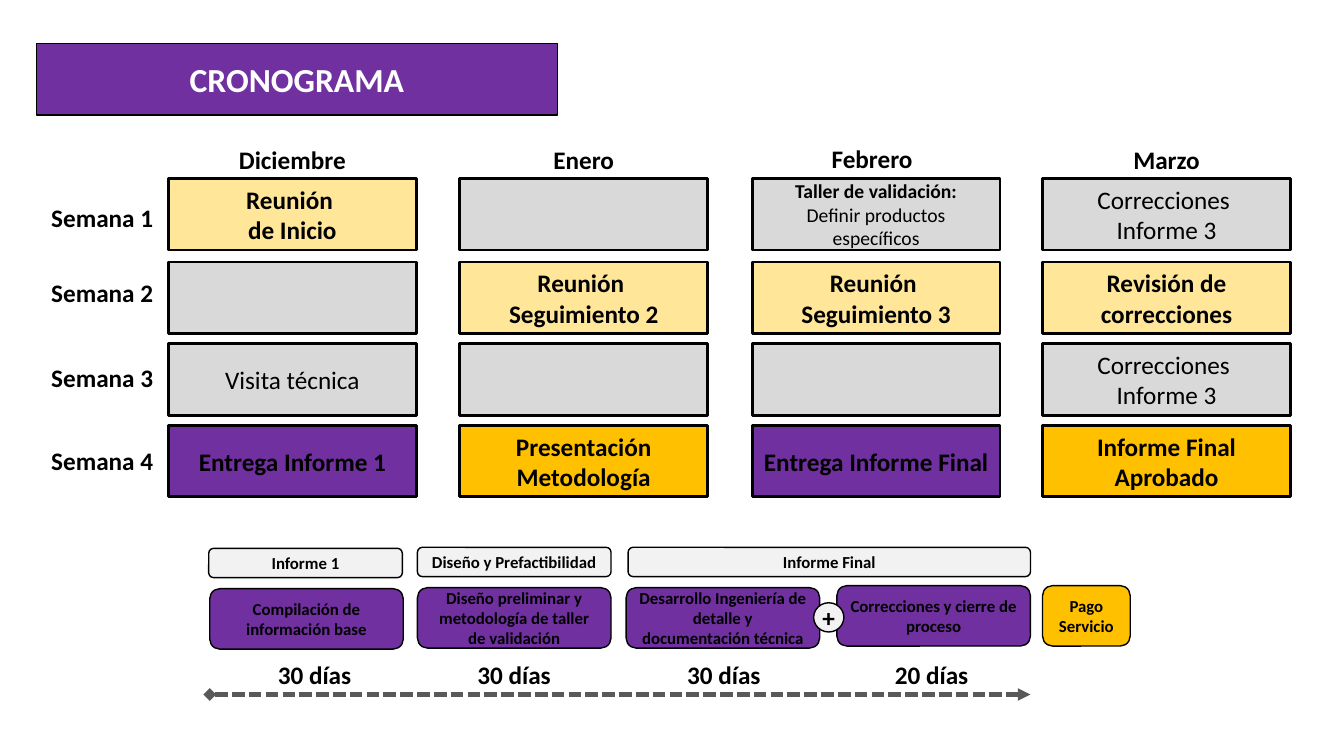
from lxml import etree
from pptx import Presentation
from pptx import util as u
from pptx.dml.color import RGBColor
from pptx.enum import dml, shapes, text
from pptx.oxml import ns

PX = 9144
HUES = {"purple": "7030A0", "gold": "FFC000", "cream": "FFE699", "grey": "D9D9D9",
        "pale": "F2F2F2", "black": "000000", "white": "FFFFFF", "dark": "595959"}
HUE = {name: RGBColor.from_string(code) for name, code in HUES.items()}
KIND = shapes.MSO_SHAPE

deck = Presentation()
deck.slide_width, deck.slide_height = 1333 * PX, 750 * PX
slide = deck.slides.add_slide(deck.slide_layouts[5])


def write(item, words, size, bold=True, hue="black", align="CENTER"):
    frame = item.text_frame
    frame.text = words
    frame.word_wrap = True
    frame.auto_size = text.MSO_AUTO_SIZE.NONE
    frame.vertical_anchor = text.MSO_ANCHOR.MIDDLE
    for para in frame.paragraphs:
        para.alignment = text.PP_ALIGN[align]
        for run in para.runs:
            run.font.name = "Calibri"
            run.font.size = u.Pt(size)
            run.font.bold = bold
            run.font.color.rgb = HUE[hue]


def box(kind, area, fill, line, words, size, bold=True):
    item = slide.shapes.add_shape(kind, *[n * PX for n in area])
    item.shadow.inherit = False
    item.fill.solid()
    item.fill.fore_color.rgb = HUE[fill]
    item.line.color.rgb = HUE["black"]
    item.line.width = u.Pt(line)
    if words:
        write(item, words, size, bold)
    return item


title = slide.shapes.title
title.left, title.top, title.width, title.height = [n * PX for n in (36, 43, 517, 71)]
etree.SubElement(title.element.spPr, ns.qn("a:prstGeom"), prst="roundRect")
title.fill.solid()
title.fill.fore_color.rgb = HUE["purple"]
title.line.color.rgb = HUE["black"]
title.line.width = u.Pt(1)
write(title, "CRONOGRAMA", 24, hue="white")

labels = [
    ("Diciembre", 167, 138, 246, "CENTER"),
    ("Enero", 456, 138, 246, "CENTER"),
    ("Febrero", 742, 137, 246, "CENTER"),
    ("Marzo", 1034, 138, 246, "CENTER"),
    ("Semana 1", 41, 196, 128, "LEFT"),
    ("Semana 2", 41, 270, 128, "LEFT"),
    ("Semana 3", 41, 354, 128, "LEFT"),
    ("Semana 4", 41, 437, 128, "LEFT"),
    ("30 días", 252, 649, 120, "CENTER"),
    ("30 días", 450, 649, 120, "CENTER"),
    ("30 días", 658, 649, 120, "CENTER"),
    ("20 días", 864, 649, 120, "CENTER"),
]
for words, x, y, wide, align in labels:
    label = slide.shapes.add_textbox(x * PX, y * PX, wide * PX, 40 * PX)
    write(label, words, 18, align=align)

cols = (167, 456, 746, 1034)
weeks = [
    (177, [("cream", "Reunión \vde Inicio"), ("grey", ""),
           ("grey", "Taller de validación:\vDefinir productos específicos"),
           ("grey", "Correcciones \vInforme 3")]),
    (260, [("grey", ""), ("cream", "Reunión \vSeguimiento 2"),
           ("cream", "Reunión \vSeguimiento 3"), ("cream", "Revisión de correcciones")]),
    (341, [("grey", "Visita técnica"), ("grey", ""), ("grey", ""),
           ("grey", "Correcciones \vInforme 3")]),
    (422, [("purple", "Entrega Informe 1"), ("gold", "Presentación Metodología"),
           ("purple", "Entrega Informe Final"), ("gold", "Informe Final Aprobado")]),
]
for y, cells in weeks:
    for x, (fill, words) in zip(cols, cells):
        talk = words.startswith("Taller")
        cell = box(KIND.RECTANGLE, (x, y, 246, 71), fill, 2, words,
                   14 if talk else 18, fill != "grey")
        if talk:
            cell.text_frame.paragraphs[0].runs[0].font.bold = True

stages = [
    ("Informe 1", 207, 544, 192, 29, "pale"),
    ("Diseño y Prefactibilidad", 414, 543, 192, 29, "pale"),
    ("Informe Final", 623, 543, 399, 29, "pale"),
    ("Compilación de información base", 208, 584, 192, 60, "purple"),
    ("Diseño preliminar y metodología de taller de validación", 414, 583, 192, 60, "purple"),
    ("Desarrollo Ingeniería de detalle y documentación técnica", 621, 583, 192, 60, "purple"),
    ("Correcciones y cierre de proceso", 830, 581, 192, 60, "purple"),
    ("Pago Servicio", 1034, 581, 87, 60, "gold"),
]
for words, *area, fill in stages:
    box(KIND.ROUNDED_RECTANGLE, area, fill, 1, words, 12)

plus = box(KIND.OVAL, (807, 598, 30, 29), "pale", 1, "+", 18)
frame = plus.text_frame
frame.margin_left = frame.margin_right = frame.margin_top = frame.margin_bottom = 0

arrow = slide.shapes.add_connector(shapes.MSO_CONNECTOR.STRAIGHT,
                                   208 * PX, 689 * PX, 1022 * PX, 689 * PX)
arrow.line.color.rgb = HUE["dark"]
arrow.line.width = u.Pt(3)
arrow.line.dash_style = dml.MSO_LINE.SQUARE_DOT
stroke = arrow.line._get_or_add_ln()
etree.SubElement(stroke, ns.qn("a:headEnd"), type="diamond")
etree.SubElement(stroke, ns.qn("a:tailEnd"), type="triangle")
etree.SubElement(arrow.element.spPr, ns.qn("a:effectLst"))

deck.save("out.pptx")
